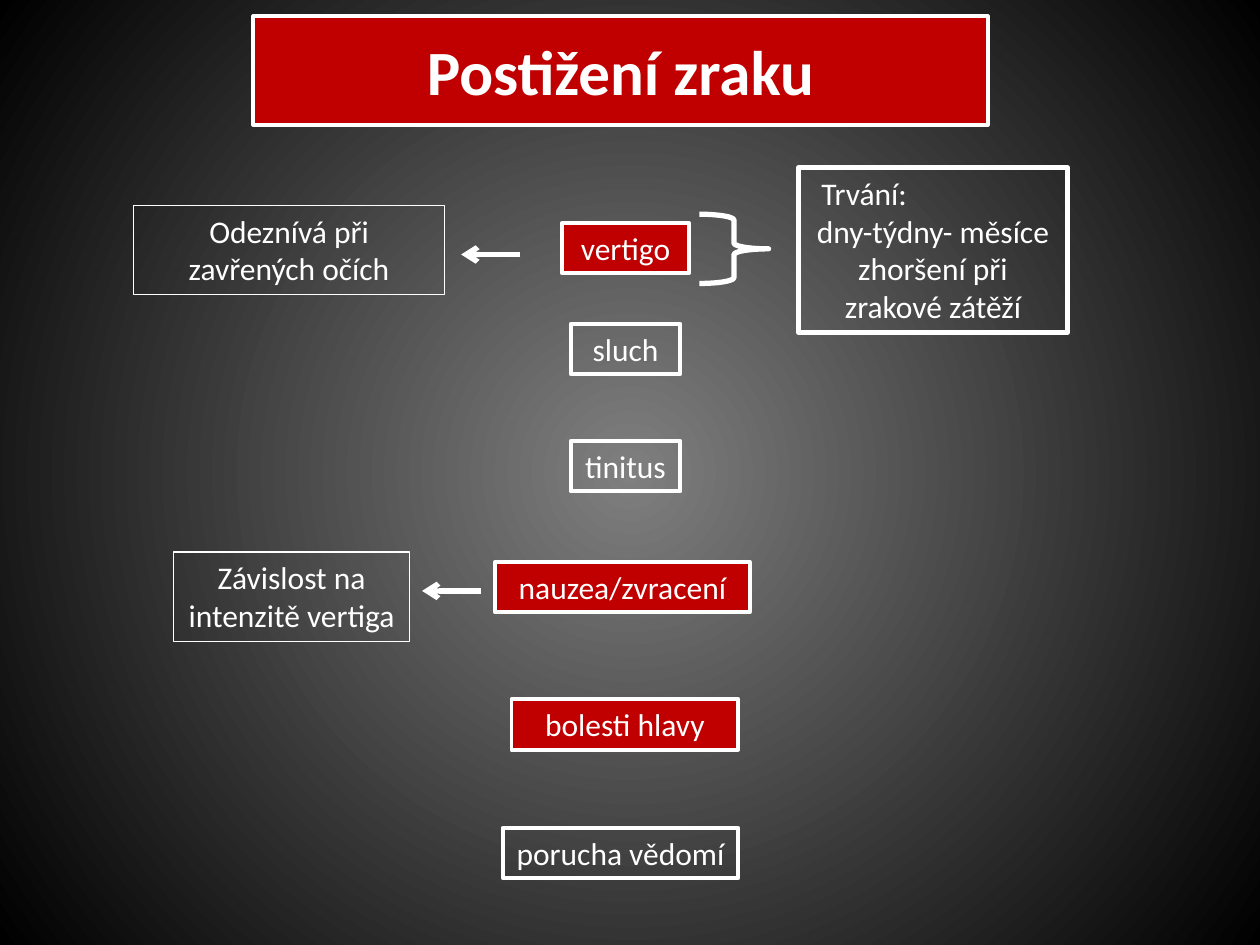
from dataclasses import dataclass

from lxml import etree
from pptx import Presentation
from pptx.dml.color import RGBColor
from pptx.enum.shapes import MSO_CONNECTOR, MSO_SHAPE
from pptx.enum.text import MSO_ANCHOR, MSO_AUTO_SIZE, PP_ALIGN
from pptx.oxml.ns import qn
from pptx.util import Inches, Pt

CENTER, LEFT = PP_ALIGN.CENTER, PP_ALIGN.LEFT
TOP, MIDDLE = MSO_ANCHOR.TOP, MSO_ANCHOR.MIDDLE
GROW, FIXED = MSO_AUTO_SIZE.SHAPE_TO_FIT_TEXT, MSO_AUTO_SIZE.NONE
BRACE, STRAIGHT = MSO_SHAPE.RIGHT_BRACE, MSO_CONNECTOR.STRAIGHT


@dataclass(frozen=True)
class Theme:
    font: str = "Calibri"
    head: int = 36
    body: int = 18
    white: RGBColor = RGBColor(255, 255, 255)
    red: RGBColor = RGBColor(192, 0, 0)
    gray: RGBColor = RGBColor(127, 127, 127)
    black: RGBColor = RGBColor(0, 0, 0)
    thin: float = 0.75
    mid: float = 2.25
    thick: float = 3


class Board:
    def __init__(self, slide, theme):
        self.slide, self.theme = slide, theme

    def glow(self):
        """Radial backdrop, lightest in the centre."""
        fill = self.slide.background.fill
        fill.gradient()
        for stop, color in zip(fill.gradient_stops, (self.theme.gray, self.theme.black)):
            stop.color.rgb = color
        grad = self.slide.element.find(".//" + qn("a:gradFill"))
        grad.remove(grad.find(qn("a:lin")))
        path = etree.SubElement(grad, qn("a:path"), path="circle")
        etree.SubElement(path, qn("a:fillToRect"), l="50000", t="50000", r="50000", b="50000")

    def edge(self, item, width):
        item.line.color.rgb = self.theme.white
        item.line.width = Pt(width)

    def box(self, text, x, y, w, h, line, red=False, title=False):
        item = self.slide.shapes.add_textbox(Inches(x), Inches(y), Inches(w), Inches(h))
        if red:
            item.fill.solid()
            item.fill.fore_color.rgb = self.theme.red
        self.edge(item, line)
        frame = item.text_frame
        frame.word_wrap = True
        frame.auto_size = FIXED if title else GROW
        frame.vertical_anchor = MIDDLE if title else TOP
        frame.text = text
        for para in frame.paragraphs:
            para.alignment = CENTER
            font = para.font
            font.name, font.bold = self.theme.font, title
            font.size = Pt(self.theme.head if title else self.theme.body)
            font.color.rgb = self.theme.white
        return item

    def brace(self, x, y, w, h):
        item = self.slide.shapes.add_shape(BRACE, Inches(x), Inches(y), Inches(w), Inches(h))
        item.shadow.inherit = False
        item.fill.background()
        self.edge(item, self.theme.thick)

    def arrow(self, start, end, y):
        item = self.slide.shapes.add_connector(
            STRAIGHT, Inches(start), Inches(y), Inches(end), Inches(y))
        self.edge(item, self.theme.thick)
        etree.SubElement(item.line._get_or_add_ln(), qn("a:tailEnd"), type="arrow")
        etree.SubElement(item.element.spPr, qn("a:effectLst"))


def main():
    deck = Presentation()
    deck.slide_width, deck.slide_height = Inches(10), Inches(7.5)
    theme = Theme()
    board = Board(deck.slides.add_slide(deck.slide_layouts[6]), theme)
    board.glow()

    # Title
    board.box("Postižení zraku", 2.01, 0.13, 5.83, 0.86, theme.mid, red=True, title=True)

    # Symptoms: text, left, top, width, red when present
    for text, x, y, w, red in (
        ("vertigo", 4.46, 1.77, 1.01, True),
        ("sluch", 4.53, 2.57, 0.87, False),
        ("tinitus", 4.53, 3.5, 0.87, False),
        ("nauzea/zvracení", 3.93, 4.46, 2.02, True),
        ("bolesti hlavy", 4.06, 5.55, 1.8, True),
        ("porucha vědomí", 3.99, 6.57, 1.87, False),
    ):
        board.box(text, x, y, w, 0.4, theme.mid, red)

    # Duration, its first line set left
    note = board.box("Trvání:\ndny-týdny- měsíce zhoršení při zrakové zátěží",
                     6.34, 1.33, 2.13, 1.31, theme.thick)
    first = note.text_frame.paragraphs[0]
    first.alignment = LEFT
    first._p.get_or_add_pPr().set("marL", str(Inches(0.08)))
    board.brace(5.55, 1.7, 0.55, 0.55)

    # Notes on the left, each with an arrow
    board.box("Odeznívá při zavřených očích", 1.06, 1.63, 2.47, 0.71, theme.thin)
    board.box("Závislost na intenzitě vertiga", 1.38, 4.38, 1.87, 0.71, theme.thin)
    for start, y in ((4.13, 2.02), (3.82, 4.69)):
        board.arrow(start, start - 0.47, y)

    deck.save("out.pptx")


if __name__ == "__main__":
    main()
